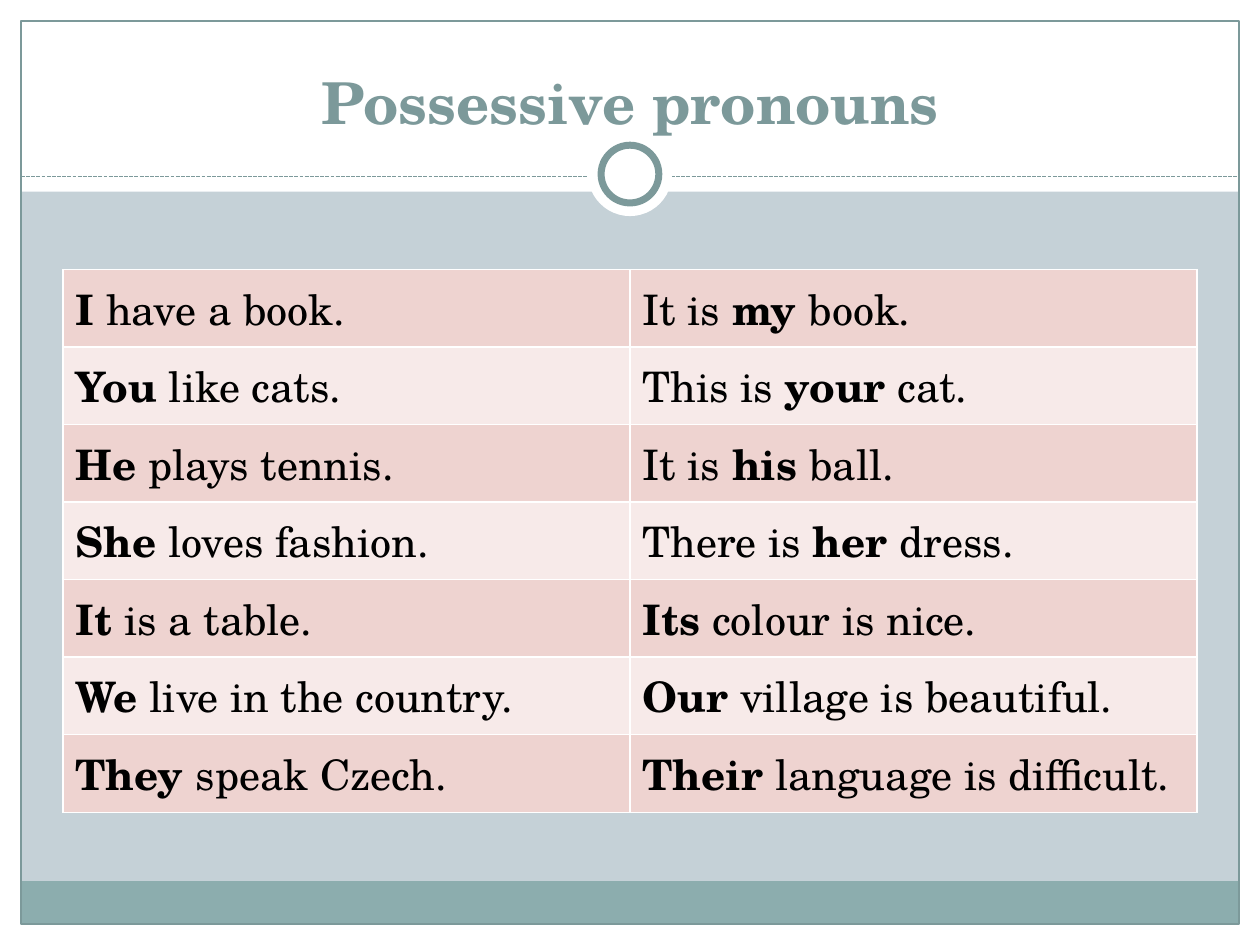
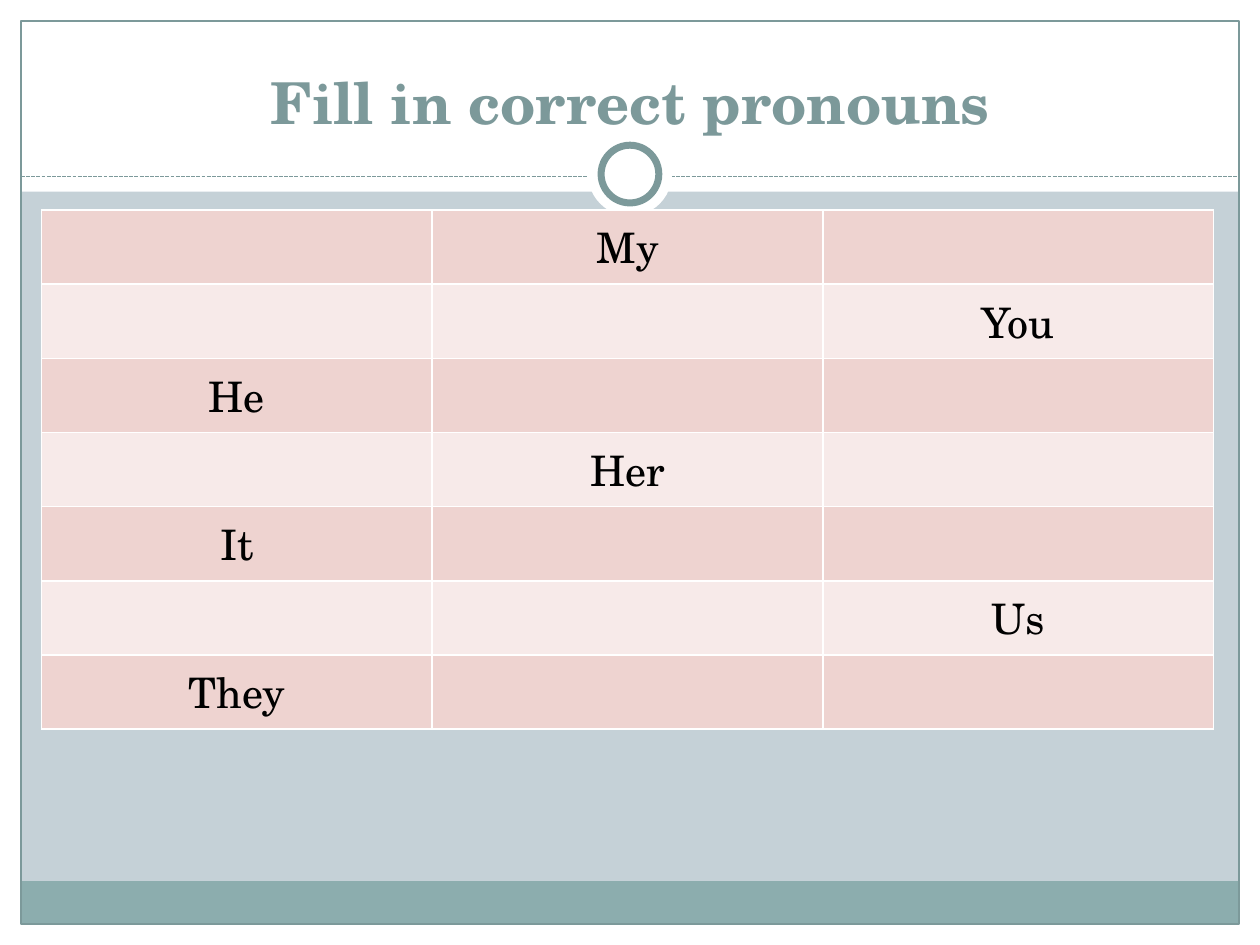
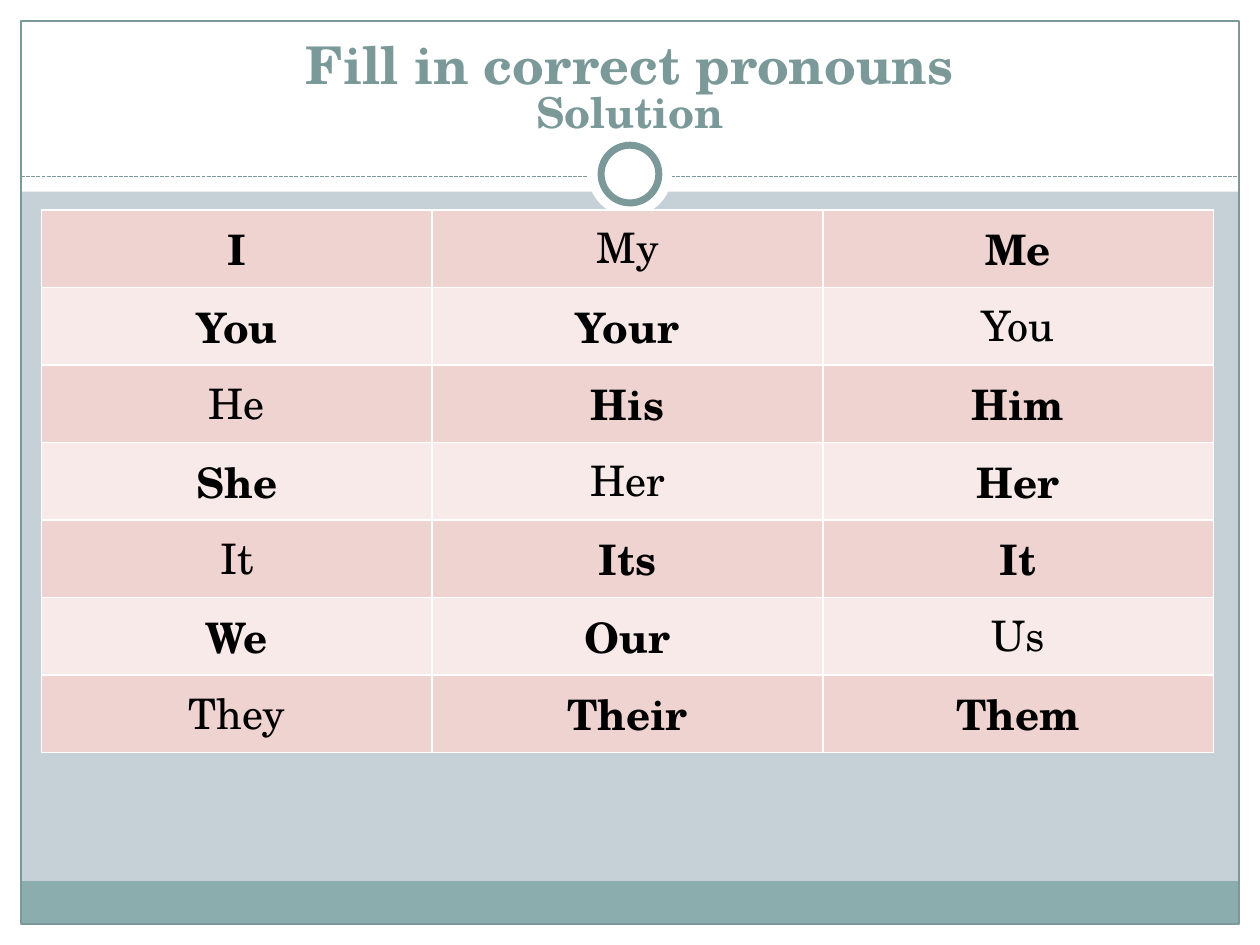
from dataclasses import dataclass

from lxml import etree
from pptx import Presentation
from pptx import util as u
from pptx.dml.color import RGBColor
from pptx.enum import dml, shapes, text
from pptx.oxml import ns


@dataclass(frozen=True)
class Theme:
    font: str = "TeX Gyre Schola"
    ground: str = "C5D1D7"
    paper: str = "FFFFFF"
    band: str = "8CADAE"
    accent: str = "7C999A"
    ink: str = "000000"
    stripes: tuple = ("EED3D0", "F7EAE9")
    title_size: float = 33
    small_title_size: float = 29.7
    subtitle_size: float = 24.3
    cell_size: float = 24


THEME = Theme()
WIDTH, HEIGHT, MARGIN = 720, 540, 12
TITLE_ONLY = 5

# Words between asterisks are bold
SENTENCES = [
    ["*I *have a book.", "It is *my *book."],
    ["*You *like cats.", "This is *your *cat."],
    ["*He *plays tennis.", "It is *his *ball."],
    ["*She *loves fashion.", "There is *her *dress."],
    ["*It *is a table.", "*Its *colour is nice."],
    ["*We* live in the country.", "*Our *village is beautiful."],
    ["*They *speak Czech.", "*Their *language is difficult."],
]
SOLUTION = [
    ["*I*", "My", "*Me*"],
    ["*You*", "*Your*", "You"],
    ["He", "*His*", "*Him*"],
    ["*She*", "Her", "*Her*"],
    ["It", "*Its*", "*It*"],
    ["*We*", "*Our*", "Us"],
    ["They", "*Their*", "*Them*"],
]
# The exercise shows only the given words, which are not bold
EXERCISE = [["" if "*" in word else word for word in row] for row in SOLUTION]


def apply(target, values):
    for name, value in values.items():
        setattr(target, name, value)


def colour(value):
    return RGBColor.from_string(value)


def add_span(para, words, size, ink, bold):
    span = para.add_run()
    span.text = words
    apply(span.font, {"name": THEME.font, "size": u.Pt(size), "bold": bold})
    span.font.color.rgb = colour(ink)


def add_figure(page, kind, left, top, width, height, fill=None, line=None, weight=0.75):
    figure = page.shapes.add_shape(kind, *map(u.Pt, (left, top, width, height)))
    figure.shadow.inherit = False
    if fill:
        figure.fill.solid()
        figure.fill.fore_color.rgb = colour(fill)
    else:
        figure.fill.background()
    if line:
        figure.line.color.rgb = colour(line)
        figure.line.width = u.Pt(weight)
    else:
        figure.line.fill.background()


def add_dashed_line(page, top):
    line = page.shapes.add_connector(
        shapes.MSO_CONNECTOR.STRAIGHT,
        *map(u.Pt, (MARGIN, top, WIDTH - MARGIN, top)))
    line.line.color.rgb = colour(THEME.accent)
    apply(line.line, {"width": u.Pt(0.75), "dash_style": dml.MSO_LINE.SQUARE_DOT})
    etree.SubElement(line.element.spPr, ns.qn("a:effectLst"))


def add_decor(page):
    rect, oval = shapes.MSO_SHAPE.RECTANGLE, shapes.MSO_SHAPE.OVAL
    inner_width, inner_height = WIDTH - 2 * MARGIN, HEIGHT - 2 * MARGIN
    # White margins and header
    for area in [(0, HEIGHT - MARGIN, WIDTH, MARGIN), (0, 0, WIDTH, 109.5),
                 (0, 0, MARGIN, HEIGHT), (WIDTH - MARGIN, 0, MARGIN, HEIGHT)]:
        add_figure(page, rect, *area, fill=THEME.paper)
    # Footer band, frame and header rule
    add_figure(page, rect, MARGIN, 503.5, inner_width, 24.5, fill=THEME.band)
    add_figure(page, rect, MARGIN, MARGIN, inner_width, inner_height, line=THEME.accent)
    add_dashed_line(page, 100.8)
    # Ring on the rule
    for size, line in [(48, None), (33, THEME.accent)]:
        add_figure(page, oval, (WIDTH - size) / 2, 99.5 - size / 2, size, size,
                   fill=THEME.paper, line=line, weight=4)


def set_title(page, lines, spacing):
    title = page.shapes.title
    # Bring the title in front of the header band
    title.element.getparent().append(title.element)
    apply(title, {"left": u.Pt(24), "top": u.Pt(18),
                  "width": u.Pt(672), "height": u.Pt(60)})
    apply(title.text_frame, {
        "word_wrap": True, "auto_size": text.MSO_AUTO_SIZE.NONE,
        "vertical_anchor": text.MSO_ANCHOR.BOTTOM, "margin_bottom": 0})
    para = title.text_frame.paragraphs[0]
    apply(para, {"alignment": text.PP_ALIGN.CENTER, "line_spacing": spacing})
    for index, (words, size) in enumerate(lines):
        if index:
            para.add_line_break()
        add_span(para, words, size, THEME.accent, True)


def add_borders(cell):
    props = cell._tc.get_or_add_tcPr()
    for side in ("lnL", "lnR", "lnT", "lnB"):
        edge = etree.SubElement(props, ns.qn(f"a:{side}"), w=str(u.Pt(1)))
        fill = etree.SubElement(edge, ns.qn("a:solidFill"))
        etree.SubElement(fill, ns.qn("a:srgbClr"), val=THEME.paper)


def add_grid(page, rows, left, top, width, row_height, align):
    columns = len(rows[0])
    table = page.shapes.add_table(
        len(rows), columns,
        *map(u.Pt, (left, top, width, row_height * len(rows)))).table
    apply(table, {"first_row": False, "horz_banding": False})
    for column in table.columns:
        column.width = u.Pt(width / columns)
    for row_index, row in enumerate(rows):
        table.rows[row_index].height = u.Pt(row_height)
        for column_index, words in enumerate(row):
            cell = table.cell(row_index, column_index)
            add_borders(cell)
            cell.fill.solid()
            cell.fill.fore_color.rgb = colour(THEME.stripes[row_index % 2])
            para = cell.text_frame.paragraphs[0]
            para.alignment = align
            for index, part in enumerate(words.split("*")):
                if part:
                    add_span(para, part, THEME.cell_size, THEME.ink, index % 2 == 1)


def add_page(deck, lines, spacing=1.0):
    page = deck.slides.add_slide(deck.slide_layouts[TITLE_ONLY])
    add_decor(page)
    set_title(page, lines, spacing)
    return page


def main():
    deck = Presentation()
    apply(deck, {"slide_width": u.Pt(WIDTH), "slide_height": u.Pt(HEIGHT)})
    ground = deck.slide_master.background.fill
    ground.solid()
    ground.fore_color.rgb = colour(THEME.ground)

    # Example sentences
    page = add_page(deck, [("Possessive pronouns", THEME.title_size)])
    add_grid(page, SENTENCES, 36, 154, 648, 44.3, text.PP_ALIGN.LEFT)

    # Exercise and its solution
    heading = "Fill in correct pronouns"
    page = add_page(deck, [(heading, THEME.title_size)])
    add_grid(page, EXERCISE, 23.75, 120, 669.6, 42.4, text.PP_ALIGN.CENTER)

    page = add_page(deck, [(heading, THEME.small_title_size),
                           ("Solution", THEME.subtitle_size)], 0.82)
    add_grid(page, SOLUTION, 23.75, 120, 669.6, 44.3, text.PP_ALIGN.CENTER)

    deck.save("out.pptx")


if __name__ == "__main__":
    main()
